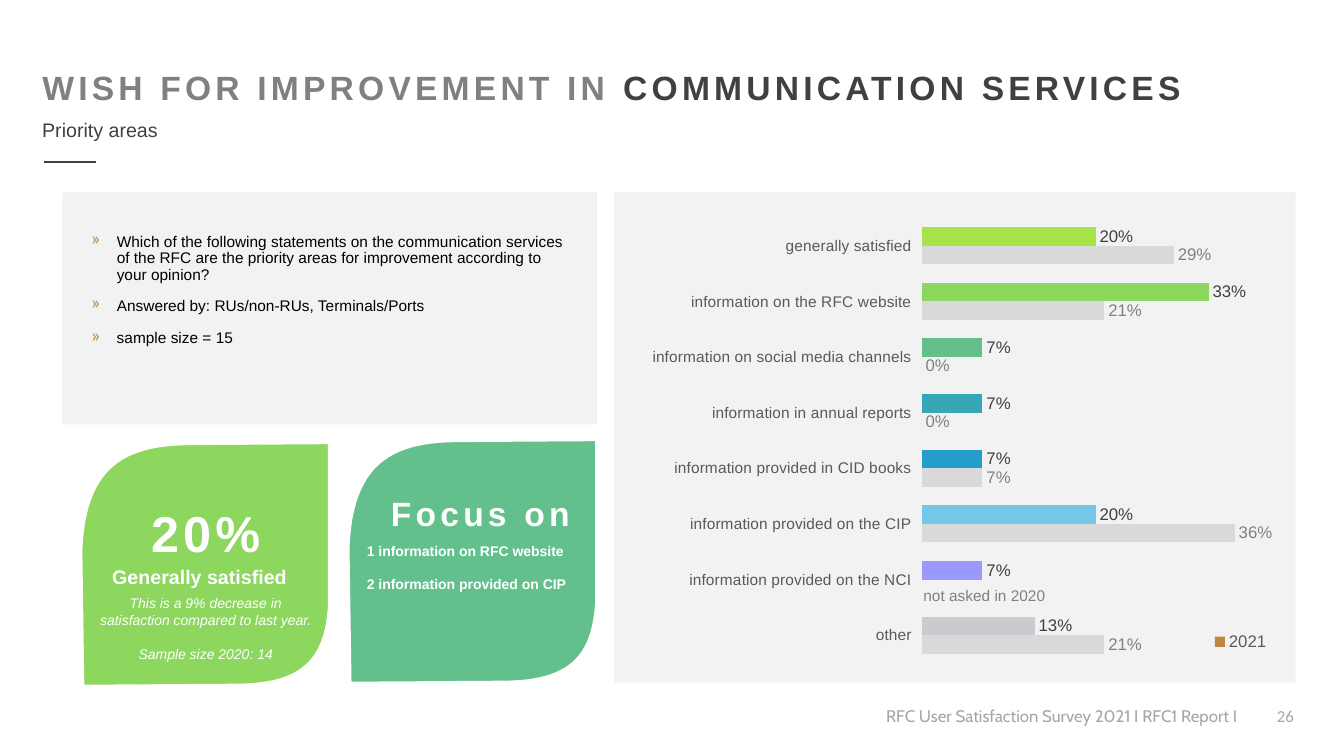
from lxml.etree import SubElement
from pptx import Presentation
from pptx.chart.data import CategoryChartData
from pptx.dml.color import RGBColor
from pptx.enum.chart import XL_CHART_TYPE as ChartType, XL_LABEL_POSITION as LabelPos
from pptx.enum.chart import XL_LEGEND_POSITION as LegendPos, XL_TICK_MARK as Tick
from pptx.enum.shapes import MSO_CONNECTOR as Connector, MSO_SHAPE as Shape
from pptx.enum.text import MSO_ANCHOR as Anchor, PP_ALIGN as Align
from pptx.oxml import parse_xml
from pptx.oxml.ns import nsdecls, qn
from pptx.util import Inches, Pt

WIDTH, HEIGHT = 13.33, 7.5
WHITE, PANEL, DARK, MID, PALE = "FFFFFF", "F2F2F2", "404040", "808080", "A6A6A6"
LIME, GREEN, GOLD, BLACK, AXIS = "8DD75F", "63C08C", "BF873D", "000000", "595959"

TITLE = [("WISH FOR IMPROVEMENT IN ", MID), ("COMMUNICATION SERVICES", DARK)]
PANELS = [(0.62, 1.91, 5.3, 2.3), (6.09, 1.91, 6.76, 4.86)]
# left, top, colour
LEAVES = [(0.81, 4.4, LIME), (3.46, 4.37, GREEN)]
LEAF_CURVES = [
    [(0, 1.07), (0.03, 0.24), (0.41, 0.02), (1.05, 0.01)],
    [(2.45, 1.6), (2.42, 2.17), (2.16, 2.38), (1.56, 2.39)],
]
LEAF_CORNER, LEAF_TIP = (2.45, 0), (0.02, 2.4)

QUESTIONS = [
    ((0.81, 2.27, 4.95, 0.82), [
        "Which of the following statements on the communication services of the RFC "
        "are the priority areas for improvement according to your opinion?",
        "Answered by: RUs/non-RUs, Terminals/Ports"]),
    ((0.81, 3.23, 2.27, 0.33), ["sample size = 15"]),
]
# place, lines, format
LABELS = [
    ((0.32, 1.12, 1.36, 0.34), ["Priority areas"], dict(size=14, color=DARK)),
    ((3.75, 4.84, 2.03, 0.5), ["Focus on"],
     dict(size=24, bold=True, spacing=3, align=Align.CENTER)),
    ((3.54, 5.33, 2.2, 0.94), ["1 information on RFC website", "2 information provided on CIP"],
     dict(size=10, bold=True, gaps=(0, 12))),
    ((1.37, 4.93, 1.34, 0.71), ["20%"],
     dict(size=36, bold=True, spacing=3, align=Align.CENTER)),
    ((1.01, 5.56, 1.94, 0.34), ["Generally satisfied"],
     dict(size=14, bold=True, align=Align.CENTER)),
    ((0.81, 5.85, 2.46, 0.77),
     ["This is a 9% decrease in", "satisfaction compared to last year.", "Sample size 2020: 14"],
     dict(size=10, italic=True, align=Align.CENTER, gaps=(0, 0, 12), wrap=True)),
    ((8.69, 6.95, 3.72, 0.3), ["RFC User Satisfaction Survey 2021 I RFC1 Report I"],
     dict(size=12, color=PALE, font="Cabin")),
    ((12.31, 6.95, 0.62, 0.4), ["26"],
     dict(size=12, color=PALE, font="Calibri", align=Align.RIGHT, wrap=True)),
]

# area, 2021, 2020, colour of 2021
RESULTS = [
    ("generally satisfied", 0.2, 0.29, "A5E348"),
    ("information on the RFC website", 0.33, 0.21, LIME),
    ("information on social media channels", 0.07, 0, GREEN),
    ("information in annual reports", 0.07, 0, "37A7B5"),
    ("information provided in CID books", 0.07, 0.07, "239DCC"),
    ("information provided on the CIP", 0.2, 0.36, "74C7E9"),
    ("information provided on the NCI", 0.07, 0, "9999FF"),
    ("other", 0.13, 0.21, "CBCACF"),
]
SERIES_STYLE = [(GOLD, DARK), ("D9D9D9", MID)]


def rgb(color):
    return RGBColor.from_string(color)


def inches(place):
    return [Inches(value) for value in place]


def paint(item, color):
    item.fill.solid()
    item.fill.fore_color.rgb = rgb(color)


def style_font(font, size, color, name="Arial"):
    font.size, font.name = Pt(size), name
    font.color.rgb = rgb(color)


def add_run(para, text, size, color=WHITE, font="Arial", bold=False, italic=False, spacing=0):
    span = para.add_run()
    span.text = text
    style_font(span.font, size, color, font)
    span.font.bold, span.font.italic = bold, italic
    if spacing:
        span._r.get_or_add_rPr().set("spc", str(spacing * 100))


def write(box, lines, wrap=False, align=Align.LEFT, gaps=(), **run_format):
    """Fill a box with one paragraph per line; gaps are points before each one."""
    frame = box.text_frame
    frame.word_wrap = wrap
    for index, line in enumerate(lines):
        para = frame.paragraphs[0] if index == 0 else frame.add_paragraph()
        para.alignment = align
        if gaps:
            para.space_before = Pt(gaps[index])
        add_run(para, line, **run_format)


def add_bullet(para):
    para.line_spacing = 0.9
    props = para._p.get_or_add_pPr()
    indent = Inches(0.25)
    props.set("marL", str(indent))
    props.set("indent", str(-indent))
    SubElement(SubElement(props, qn("a:buClr")), qn("a:srgbClr")).set("val", GOLD)
    SubElement(props, qn("a:buChar")).set("char", "»")


def add_panel(page, place):
    panel = page.shapes.add_shape(Shape.RECTANGLE, *inches(place))
    panel.shadow.inherit = False
    paint(panel, PANEL)
    panel.line.fill.background()
    return panel


def bezier(points, steps=24):
    """Points along a cubic curve, both ends included."""
    curve = []
    for step in range(steps + 1):
        t = step / steps
        weights = ((1 - t) ** 3, 3 * t * (1 - t) ** 2, 3 * t * t * (1 - t), t ** 3)
        curve.append(tuple(sum(w * p[axis] for w, p in zip(weights, points)) for axis in (0, 1)))
    return curve


def add_leaf(page, left, top, color):
    rounded_top, rounded_bottom = map(bezier, LEAF_CURVES)
    outline = [LEAF_TIP, *rounded_top, LEAF_CORNER, *rounded_bottom]
    points = [inches((left + x, top + y)) for x, y in outline]
    builder = page.shapes.build_freeform(*points[0])
    builder.add_line_segments(points[1:], close=True)
    leaf = builder.convert_to_shape()
    leaf.shadow.inherit = False
    paint(leaf, color)
    leaf.line.color.rgb, leaf.line.width = rgb(WHITE), Pt(1)


def manual_layout(x, y, w, h, inner=False):
    target = '<c:layoutTarget val="inner"/>' if inner else ""
    sizes = "".join(f'<c:{key} val="{value}"/>' for key, value in zip("xywh", (x, y, w, h)))
    return parse_xml(f'<c:layout {nsdecls("c")}><c:manualLayout>{target}<c:xMode val="edge"/>'
                     f'<c:yMode val="edge"/>{sizes}</c:manualLayout></c:layout>')


def drop_layout(element):
    for layout in element.findall(qn("c:layout")):
        element.remove(layout)


def add_results_chart(page):
    areas, now, before, colors = zip(*RESULTS)
    data = CategoryChartData(number_format="0%")
    data.categories = areas
    data.add_series("2021", now)
    data.add_series("2020", before)
    place = inches((6.33, 2.02, 6.39, 4.7))
    chart = page.shapes.add_chart(ChartType.BAR_CLUSTERED, *place, data).chart
    chart.has_title = False
    style_font(chart.font, 10, BLACK)

    plot = chart.plots[0]
    plot.gap_width, plot.overlap, plot.vary_by_categories = 100, 0, False
    for series, (fill, label_color) in zip(plot.series, SERIES_STYLE):
        paint(series.format, fill)
        labels = series.data_labels
        labels.show_value, labels.position = True, LabelPos.OUTSIDE_END
        labels.number_format, labels.number_format_is_linked = "0%", False
        style_font(labels.font, 12, label_color)
    for index, color in enumerate(colors):
        paint(plot.series[0].points[index].format, color)

    areas_axis, share_axis = chart.category_axis, chart.value_axis
    areas_axis.reverse_order = True
    areas_axis.major_tick_mark = Tick.OUTSIDE
    areas_axis.format.line.fill.background()
    style_font(areas_axis.tick_labels.font, 11, AXIS)
    share_axis.minimum_scale, share_axis.maximum_scale = 0, 0.4
    share_axis.has_major_gridlines = share_axis.visible = False

    plot_area = chart._chartSpace.chart.plotArea
    drop_layout(plot_area)
    plot_area.insert(0, manual_layout(0.44, 0.03, 0.54, 0.94, inner=True))

    chart.has_legend = True
    legend = chart.legend
    legend.position, legend.include_in_layout = LegendPos.RIGHT, False
    style_font(legend.font, 12, AXIS)
    drop_layout(legend._element)
    position = legend._element.find(qn("c:legendPos"))
    position.addnext(manual_layout(0.88, 0.89, 0.11, 0.07))
    position.addnext(parse_xml(f'<c:legendEntry {nsdecls("c")}><c:idx val="0"/>'
                               '<c:delete val="1"/></c:legendEntry>'))


def main():
    deck = Presentation()
    deck.slide_width, deck.slide_height = Inches(WIDTH), Inches(HEIGHT)
    page = deck.slides.add_slide(deck.slide_layouts[5])

    title = page.shapes.title
    title.left, title.top, title.width, title.height = inches((0.32, 0.61, 12.38, 0.5))
    title.text_frame.vertical_anchor = Anchor.TOP
    heading = title.text_frame.paragraphs[0]
    heading.alignment = Align.LEFT
    for text, color in TITLE:
        add_run(heading, text, 24, color, bold=True, spacing=3)

    rule = page.shapes.add_connector(Connector.STRAIGHT, *inches((0.44, 1.61, 0.95, 1.61)))
    rule.line.color.rgb, rule.line.width = rgb(DARK), Pt(1.5)
    SubElement(rule._element.spPr, qn("a:effectLst"))

    for place in PANELS:
        add_panel(page, place)
    for leaf in LEAVES:
        add_leaf(page, *leaf)
    for place, lines in QUESTIONS:
        box = page.shapes.add_textbox(*inches(place))
        write(box, lines, wrap=True, gaps=[10] * len(lines), size=11, color=BLACK)
        for para in box.text_frame.paragraphs:
            add_bullet(para)
    for place, lines, text_format in LABELS:
        write(page.shapes.add_textbox(*inches(place)), lines, **text_format)

    add_results_chart(page)
    note = add_panel(page, (9.06, 5.76, 2.23, 0.29))
    write(note, ["not asked in 2020"], wrap=True, size=11, color=MID)
    deck.save("out.pptx")


if __name__ == "__main__":
    main()
